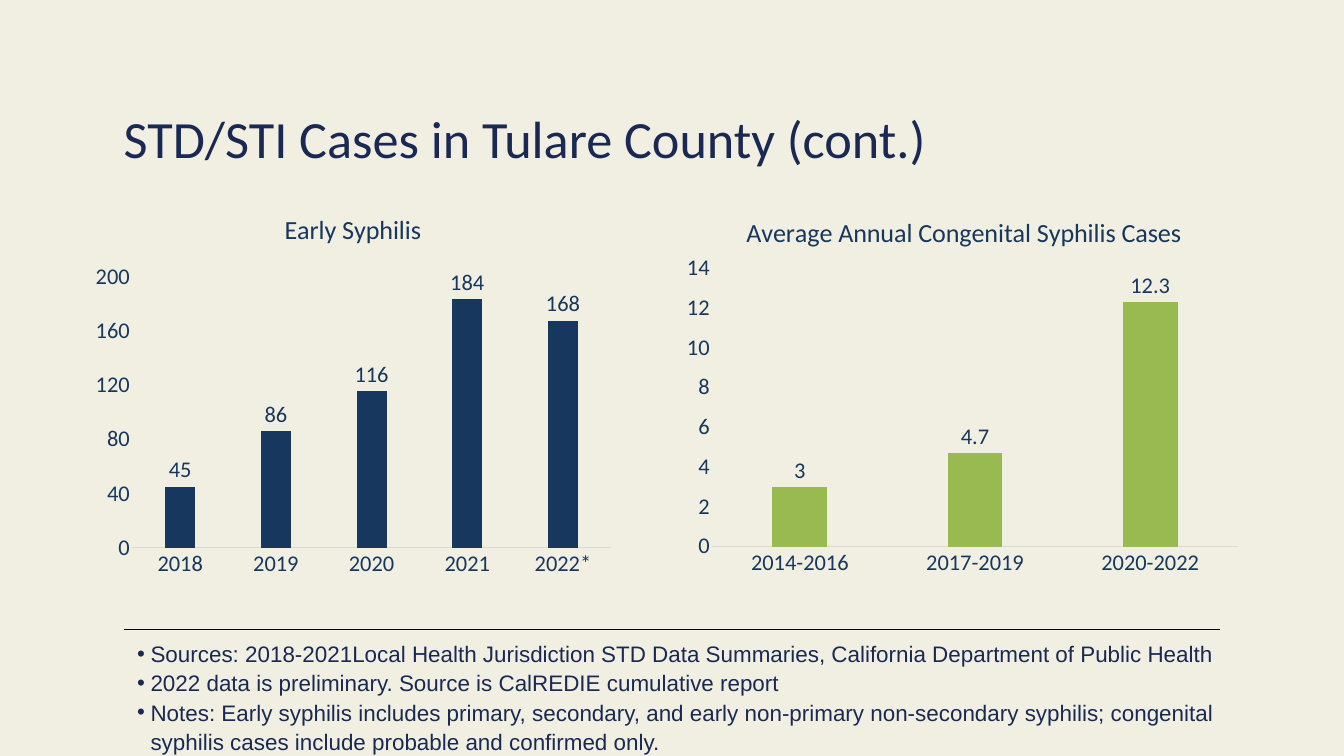
from lxml import etree
from pptx import Presentation, util as u
from pptx.chart.data import CategoryChartData
from pptx.dml.color import RGBColor
from pptx.enum import chart as ch, shapes, text
from pptx.oxml import parse_xml
from pptx.oxml.ns import nsdecls, qn

COLORS = {"paper": "F1EFE1", "ink": "192954", "navy": "17375E",
          "green": "99B951", "axis": "D9D9D9", "rule": "000000"}
COLS, ROWS = 80, 45  # quarter-inch grid


class Deck:
    """Holds the style and the current slide; places elements on the grid."""

    def __init__(self, width, height):
        self.prs = Presentation()
        self.prs.slide_width, self.prs.slide_height = u.Inches(width), u.Inches(height)

    def color(self, name):
        return RGBColor.from_string(COLORS[name])

    def x(self, cols):
        return round(self.prs.slide_width * cols / COLS)

    def y(self, rows):
        return round(self.prs.slide_height * rows / ROWS)

    def box(self, left, top, width, height):
        return self.x(left), self.y(top), self.x(width), self.y(height)

    def font(self, font, size, color, name="Calibri"):
        for key, value in {"size": u.Pt(size), "name": name, "bold": False}.items():
            setattr(font, key, value)
        font.color.rgb = self.color(color)

    def add_slide(self, background):
        self.s = self.prs.slides.add_slide(self.prs.slide_layouts[6])
        fill = self.s.background.fill
        fill.solid()
        fill.fore_color.rgb = self.color(background)

    def text(self, box, lines, size, spacing, name="Calibri", bullet=None):
        sp = self.s.shapes.add_textbox(*self.box(*box))
        tf = sp.text_frame
        frame = {"word_wrap": True, "auto_size": text.MSO_AUTO_SIZE.SHAPE_TO_FIT_TEXT,
                 "margin_left": 0, "margin_right": 0, "margin_top": 0, "margin_bottom": 0}
        for key, value in frame.items():
            setattr(tf, key, value)
        for i, line in enumerate(lines):
            p = tf.paragraphs[0] if i == 0 else tf.add_paragraph()
            p.line_spacing = spacing
            r = p.add_run()
            r.text = line
            self.font(r.font, size, "ink", name)
            if bullet:
                p.level = 1
                pPr = p._p.get_or_add_pPr()
                pPr.set("marL", str(u.Inches(0.4)))
                pPr.set("indent", str(u.Inches(-0.2)))
                etree.SubElement(pPr, qn("a:buFont")).set("typeface", name)
                etree.SubElement(pPr, qn("a:buChar")).set("char", bullet)

    def rule(self, left, right, row):
        line = self.s.shapes.add_connector(shapes.MSO_CONNECTOR.STRAIGHT, self.x(left),
                                           self.y(row), self.x(right), self.y(row))
        line.line.width = u.Pt(0.75)
        line.line.color.rgb = self.color("rule")
        etree.SubElement(line._element.spPr, qn("a:effectLst"))

    def column_chart(self, box, title, series, cases, color, top, step, plot_area):
        data = CategoryChartData()
        data.categories = list(cases)
        data.add_series(series, list(cases.values()))
        chart = self.s.shapes.add_chart(ch.XL_CHART_TYPE.COLUMN_CLUSTERED,
                                        *self.box(*box), data).chart
        chart.has_legend = False
        self.font(chart.font, 10, "rule")

        # Title
        chart.has_title = True
        tf = chart.chart_title.text_frame
        tf.text = title
        self.font(tf.paragraphs[0].runs[0].font, 28, "navy")
        chart.chart_title.include_in_layout = False

        # Axes
        for axis in (chart.category_axis, chart.value_axis):
            axis.has_major_gridlines = False
            axis.major_tick_mark = axis.minor_tick_mark = ch.XL_TICK_MARK.NONE
            self.font(axis.tick_labels.font, 24, "navy")
        line = chart.category_axis.format.line
        line.width = u.Pt(0.75)
        line.color.rgb = self.color("axis")
        chart.value_axis.format.line.fill.background()
        scale = {"minimum_scale": 0, "maximum_scale": top, "major_unit": step}
        for key, value in scale.items():
            setattr(chart.value_axis, key, value)
        labels = chart.value_axis.tick_labels
        labels.number_format, labels.number_format_is_linked = "0", False

        # Columns and their values
        plot = chart.plots[0]
        bars = {"gap_width": 219, "overlap": -27, "vary_by_categories": False,
                "has_data_labels": True}
        for key, value in bars.items():
            setattr(plot, key, value)
        fill = plot.series[0].format.fill
        fill.solid()
        fill.fore_color.rgb = self.color(color)
        plot.data_labels.show_value = True
        plot.data_labels.position = ch.XL_LABEL_POSITION.OUTSIDE_END
        self.font(plot.data_labels.font, 24, "navy")

        # Plot area, as shares of the chart
        area = chart._chartSpace.find(".//" + qn("c:plotArea"))
        for old in area.findall(qn("c:layout")):
            area.remove(old)
        shares = "".join(f'<c:{k} val="{v}"/>' for k, v in zip("xywh", plot_area))
        area.insert(0, parse_xml(
            f'<c:layout {nsdecls("c")}><c:manualLayout><c:layoutTarget val="inner"/>'
            f'<c:xMode val="edge"/><c:yMode val="edge"/>{shares}</c:manualLayout></c:layout>'))


def main():
    deck = Deck(20, 11.25)
    deck.add_slide("paper")
    left = 7.36

    # Heading
    deck.text((left, 5.76, 57.28, 4.04), ["STD/STI Cases in Tulare County (cont.)"], 56, 1.15)

    # Sources and notes below the rule
    deck.text((left, 37.96, 65.96, 6.92), [
        "Sources: 2018-2021Local Health Jurisdiction STD Data Summaries, "
        "California Department of Public Health",
        "2022 data is preliminary. Source is CalREDIE cumulative report",
        "Notes: Early syphilis includes primary, secondary, and early non-primary "
        "non-secondary syphilis; congenital syphilis cases include probable and "
        "confirmed only.",
    ], 24, 1.09, "Arial", "•")
    deck.rule(left, COLS - left, 37.44)

    # Charts
    deck.column_chart((5, 11.68, 32, 23), "Early Syphilis", "Early Syphilis",
                      {"2018": 45, "2019": 86, "2020": 116, "2021": 184, "2022*": 168},
                      "navy", 200, 40, (0.09, 0.21, 0.89, 0.7))
    deck.column_chart((40.36, 11.84, 34, 23), "Average Annual Congenital Syphilis Cases",
                      "Series 1", {"2014-2016": 3, "2017-2019": 4.7, "2020-2022": 12.3},
                      "green", 14, 2, (0.06, 0.18, 0.92, 0.72))

    deck.prs.save("out.pptx")


if __name__ == "__main__":
    main()
